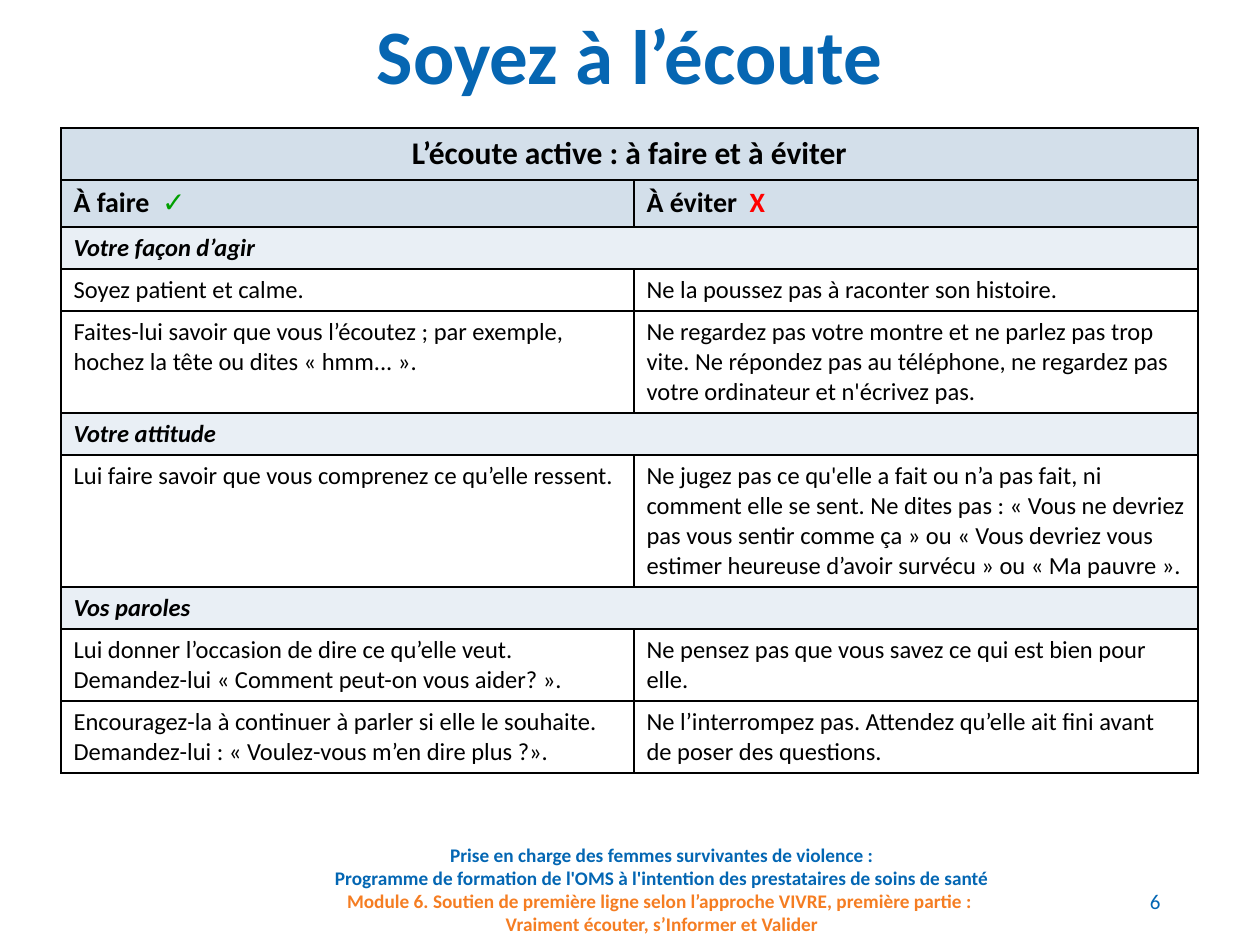
from lxml import etree
from pptx import Presentation
from pptx.dml.color import RGBColor
from pptx.enum.text import MSO_ANCHOR, PP_ALIGN
from pptx.oxml.ns import qn
from pptx.util import Pt

PX = 914400 / 126
LEFT, CENTER, RIGHT = PP_ALIGN.LEFT, PP_ALIGN.CENTER, PP_ALIGN.RIGHT
TOP, MIDDLE = MSO_ANCHOR.TOP, MSO_ANCHOR.MIDDLE
FONT = "Calibri"
BLACK, WHITE, BLUE, ORANGE = "000000", "FFFFFF", "0366B3", "F57D22"
TITLE_BLUE, GREEN, RED = "0666B2", "009F00", "FF0000"
HEADER_FILL, SECTION_FILL = "D3DFEA", "E9EFF5"

COLUMN_WIDTHS = (573, 564)
HEADING = "L’écoute active : à faire et à éviter"
HEADER_MARKS = (("À faire  ", "✓", GREEN), ("À éviter  ", "X", RED))
SECTIONS = [
    ("Votre façon d’agir", 42, [
        (42, "Soyez patient et calme.",
         "Ne la poussez pas à raconter son histoire."),
        (102, "Faites-lui savoir que vous l’écoutez ; par exemple, hochez la tête "
              "ou dites « hmm... ».",
         "Ne regardez pas votre montre et ne parlez pas trop vite. Ne répondez pas "
         "au téléphone, ne regardez pas votre ordinateur et n'écrivez pas."),
    ]),
    ("Votre attitude", 42, [
        (132, "Lui faire savoir que vous comprenez ce qu’elle ressent.",
         "Ne jugez pas ce qu'elle a fait ou n’a pas fait, ni comment elle se sent. "
         "Ne dites pas : « Vous ne devriez pas vous sentir comme ça » ou "
         "« Vous devriez vous estimer heureuse d’avoir survécu » ou "
         "« Ma pauvre »."),
    ]),
    ("Vos paroles", 42, [
        (72, "Lui donner l’occasion de dire ce qu’elle veut. Demandez-lui "
             "« Comment peut-on vous aider? ».",
         "Ne pensez pas que vous savez ce qui est bien pour elle."),
        (72, "Encouragez-la à continuer à parler si elle le souhaite. "
             "Demandez-lui : « Voulez-vous m’en dire plus ?».",
         "Ne l’interrompez pas. Attendez qu’elle ait fini avant de poser des questions."),
    ]),
]


def px(length):
    """Turn pixels into EMU."""
    return round(length * PX)


def color(value):
    """Turn a hex string into a colour."""
    return RGBColor.from_string(value)


def add_run(paragraph, text, size, ink, bold=False, italic=False):
    """Add one formatted run, with line breaks where the text has them."""
    for number, line in enumerate(text.split("\n")):
        if number:
            paragraph.add_line_break()
        if not line:
            continue
        run = paragraph.add_run()
        run.text = line
        font = run.font
        font.name, font.size, font.bold, font.italic = FONT, Pt(size), bold, italic
        font.color.rgb = color(ink)


def add_text(slide, box, align, anchor):
    """Add a wrapping text box and return its frame."""
    frame = slide.shapes.add_textbox(*map(px, box)).text_frame
    frame.word_wrap = True
    frame.vertical_anchor = anchor
    frame.paragraphs[0].alignment = align
    return frame


def place_title(slide, box):
    """Place the slide title."""
    title = slide.shapes.title
    title.left, title.top, title.width, title.height = map(px, box)
    title.text_frame.vertical_anchor = MIDDLE
    paragraph = title.text_frame.paragraphs[0]
    paragraph.alignment = CENTER
    paragraph.line_spacing = 0.9
    add_run(paragraph, "Soyez à l’écoute", 44, TITLE_BLUE, bold=True)


def place_footer(slide, box):
    """Place the programme and module names."""
    frame = add_text(slide, box, CENTER, TOP)
    add_run(frame.paragraphs[0], "Prise en charge des femmes survivantes de violence :",
            11, BLUE, bold=True)
    module = frame.add_paragraph()
    module.alignment = CENTER
    add_run(module, "Programme de formation de l'OMS à l'intention des prestataires "
                    "de soins de santé\n", 11, BLUE, bold=True)
    add_run(module, "Module 6. Soutien de première ligne selon l’approche VIVRE, "
                    "première partie : \nVraiment écouter, s’Informer et Valider",
            11, ORANGE, bold=True)


def place_number(slide, box):
    """Place the slide number."""
    frame = add_text(slide, box, RIGHT, MIDDLE)
    add_run(frame.paragraphs[0], "6", 12, BLUE)


def style_cell(cell, fill):
    """Give a cell its fill and black borders."""
    properties = cell._tc.get_or_add_tcPr()
    for side in ("a:lnL", "a:lnR", "a:lnT", "a:lnB"):
        line = etree.SubElement(properties, qn(side), w=str(Pt(1)))
        solid = etree.SubElement(line, qn("a:solidFill"))
        etree.SubElement(solid, qn("a:srgbClr"), val=BLACK)
    cell.fill.solid()
    cell.fill.fore_color.rgb = color(fill)


def fill_row(table, index, height, contents, fill, align=LEFT):
    """Write one row of run lists, merging it when there is only one."""
    row = table.rows[index]
    row.height = px(height)
    for cell in row.cells:
        style_cell(cell, fill)
    if len(contents) == 1:
        row.cells[0].merge(row.cells[1])
    for cell, runs in zip(row.cells, contents):
        paragraph = cell.text_frame.paragraphs[0]
        paragraph.alignment = align
        for run in runs:
            add_run(paragraph, *run)


def place_listening_table(slide, box):
    """Place the table of things to do and to avoid."""
    rows = [
        (52, [[(HEADING, 18, BLACK, True)]], HEADER_FILL, CENTER),
        (47, [[(label, 16, BLACK, True), (mark, 16, ink, True)]
              for label, mark, ink in HEADER_MARKS], HEADER_FILL),
    ]
    for section, height, advice in SECTIONS:
        rows.append((height, [[(section, 14, BLACK, True, True)]], SECTION_FILL))
        for advice_height, *pair in advice:
            rows.append((advice_height, [[(text, 14, BLACK)] for text in pair], WHITE))
    table = slide.shapes.add_table(len(rows), len(COLUMN_WIDTHS), *map(px, box)).table
    for column, width in zip(table.columns, COLUMN_WIDTHS):
        column.width = px(width)
    for index, row in enumerate(rows):
        fill_row(table, index, *row)


def main():
    """Build and save the slide."""
    deck = Presentation()
    deck.slide_width, deck.slide_height = px(1260), px(945)
    slide = deck.slides.add_slide(deck.slide_layouts[5])
    place_footer(slide, (219, 837, 886, 83))
    place_title(slide, (87, -10, 1086, 139))
    place_number(slide, (1105, 876, 68, 50))
    place_listening_table(slide, (61, 128, sum(COLUMN_WIDTHS), 645))
    deck.save("out.pptx")


if __name__ == "__main__":
    main()
